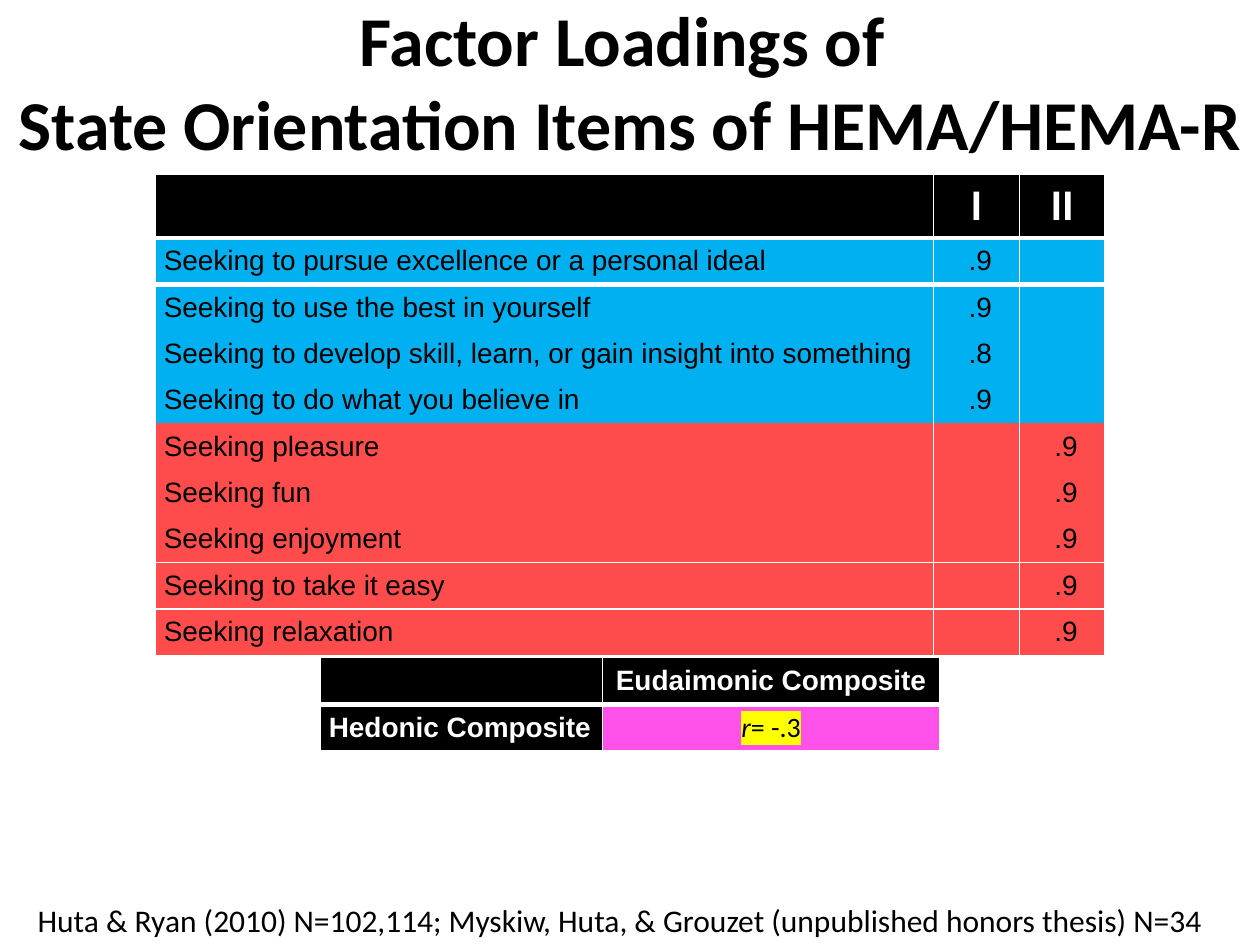
"""Build a slide of factor loadings for the HEMA state orientation items."""
import pptx
import pptx.dml.color
import pptx.enum.text
import pptx.oxml
import pptx.oxml.ns
import pptx.util

Inches = pptx.util.Inches
Pt = pptx.util.Pt
RGBColor = pptx.dml.color.RGBColor
CENTER = pptx.enum.text.PP_ALIGN.CENTER
LEFT = pptx.enum.text.PP_ALIGN.LEFT
MIDDLE = pptx.enum.text.MSO_ANCHOR.MIDDLE

BLACK = RGBColor(0x00, 0x00, 0x00)
WHITE = RGBColor(0xFF, 0xFF, 0xFF)
BLUE = RGBColor(0x00, 0xB0, 0xF0)
RED = RGBColor(0xFE, 0x4C, 0x4C)
PINK = RGBColor(0xFD, 0x51, 0xE9)
YELLOW = RGBColor(0xFF, 0xFF, 0x00)
NO_STYLE = "{2D5ABB26-0587-4C30-8999-92F81FD0307C}"
NS = pptx.oxml.ns.nsdecls("a")


def add_grid(s, left, top, widths, heights):
    rows, cols = len(heights), len(widths)
    frame = s.shapes.add_table(rows, cols, Inches(left), Inches(top),
                               Inches(sum(widths)), Inches(sum(heights)))
    table = frame.table
    table.first_row = table.horz_banding = False
    table._tbl.tblPr.find(pptx.oxml.ns.qn("a:tableStyleId")).text = NO_STYLE
    for column, width in zip(table.columns, widths):
        column.width = Inches(width)
    for row, height in zip(table.rows, heights):
        row.height = Inches(height)
    return table


def fill_cell(cell, text, fill, color, borders, size=16, font="Arial", bold=False, align=CENTER):
    cell.text_frame.text = text
    cell.vertical_anchor = MIDDLE
    cell.margin_left = cell.margin_right = Inches(0.07)
    cell.margin_top = cell.margin_bottom = 0
    p = cell.text_frame.paragraphs[0]
    p.alignment = align
    for r in p.runs:
        r.font.size, r.font.name, r.font.bold = Pt(size), font, bold
        r.font.color.rgb = color
    cell.fill.solid()
    cell.fill.fore_color.rgb = fill
    tcPr = cell._tc.get_or_add_tcPr()
    sides = [side for side in "LRTB" if side in borders]
    for i, side in enumerate(sides):
        tcPr.insert(i, pptx.oxml.parse_xml(
            f'<a:ln{side} {NS} w="{Pt(borders[side])}"><a:solidFill>'
            f'<a:srgbClr val="{WHITE}"/></a:solidFill></a:ln{side}>'))


prs = pptx.Presentation()
prs.slide_width, prs.slide_height = Inches(10), Inches(7.5)
s = prs.slides.add_slide(prs.slide_layouts[6])

texts = [
    ("Factor Loadings of \vState Orientation Items of HEMA/HEMA-R",
     (0, 0.21, 10, 0.86), 40, True, CENTER),
    ("Huta & Ryan (2010) N=102,114; Myskiw, Huta, & Grouzet (unpublished honors thesis) N=34",
     (0.2, 7.1, 9.76, 0.4), 18, False, LEFT),
]
for text, box, size, bold, align in texts:
    sp = s.shapes.add_textbox(*map(Inches, box))
    tf = sp.text_frame
    tf.word_wrap = True
    tf.vertical_anchor = MIDDLE
    tf.text = text
    p = tf.paragraphs[0]
    p.alignment = align
    for r in p.runs:
        r.font.size, r.font.name, r.font.bold = Pt(size), "Calibri", bold
        r.font.color.rgb = BLACK

composites = add_grid(s, 2.54, 5.22, [2.24, 2.68], [0.37, 0.37])
composite_cells = [
    (0, 0, "", BLACK, CENTER),
    (0, 1, "Eudaimonic Composite", BLACK, CENTER),
    (1, 0, "Hedonic Composite", BLACK, LEFT),
    (1, 1, "", PINK, CENTER),
]
for row, col, text, fill, align in composite_cells:
    borders = {"L": 1, "R": 1, "T": 1, "B": 3} if row == 0 else {"L": 1, "R": 1, "T": 3, "B": 1}
    fill_cell(composites.cell(row, col), text, fill, WHITE, borders, bold=True, align=align)

p = composites.cell(1, 1).text_frame.paragraphs[0]
for text, italic in [("r", True), ("= -.3", False)]:
    r = p.add_run()
    r.text = text
    r.font.size, r.font.name, r.font.italic = Pt(16), "Calibri", italic
    r.font.color.rgb = BLACK
    r.font._element.find(pptx.oxml.ns.qn("a:latin")).addprevious(pptx.oxml.parse_xml(
        f'<a:highlight {NS}><a:srgbClr val="{YELLOW}"/></a:highlight>'))

items = [
    ("Seeking to pursue excellence or a personal ideal", " .9", "", BLUE),
    ("Seeking to use the best in yourself", " .9", "", BLUE),
    ("Seeking to develop skill, learn, or gain insight into something", " .8", "", BLUE),
    ("Seeking to do what you believe in", " .9", "", BLUE),
    ("Seeking pleasure", "", " .9", RED),
    ("Seeking fun", "", " .9", RED),
    ("Seeking enjoyment", "", " .9", RED),
    ("Seeking to take it easy", "", " .9", RED),
    ("Seeking relaxation", "", " .9", RED),
]
row_height = (3.82 - 0.51) / len(items)
loadings = add_grid(s, 1.23, 1.38, [6.18, 0.68, 0.68], [0.51] + [row_height] * len(items))
outer = [{"L": 1, "R": 1}, {"L": 1}, {"R": 1}]
for col, text in enumerate(["", "I", "II"]):
    fill_cell(loadings.cell(0, col), text, BLACK, WHITE, {**outer[col], "T": 1, "B": 3},
              size=25, font="Calibri", bold=True)
for row, (*values, fill) in enumerate(items, 1):
    rule = {1: {"T": 3}, 7: {"B": 1}, 8: {"T": 1}}.get(row, {})
    for col, text in enumerate(values):
        fill_cell(loadings.cell(row, col), text, fill, BLACK, {**outer[col], **rule},
                  align=CENTER if col else LEFT)

prs.save("out.pptx")
